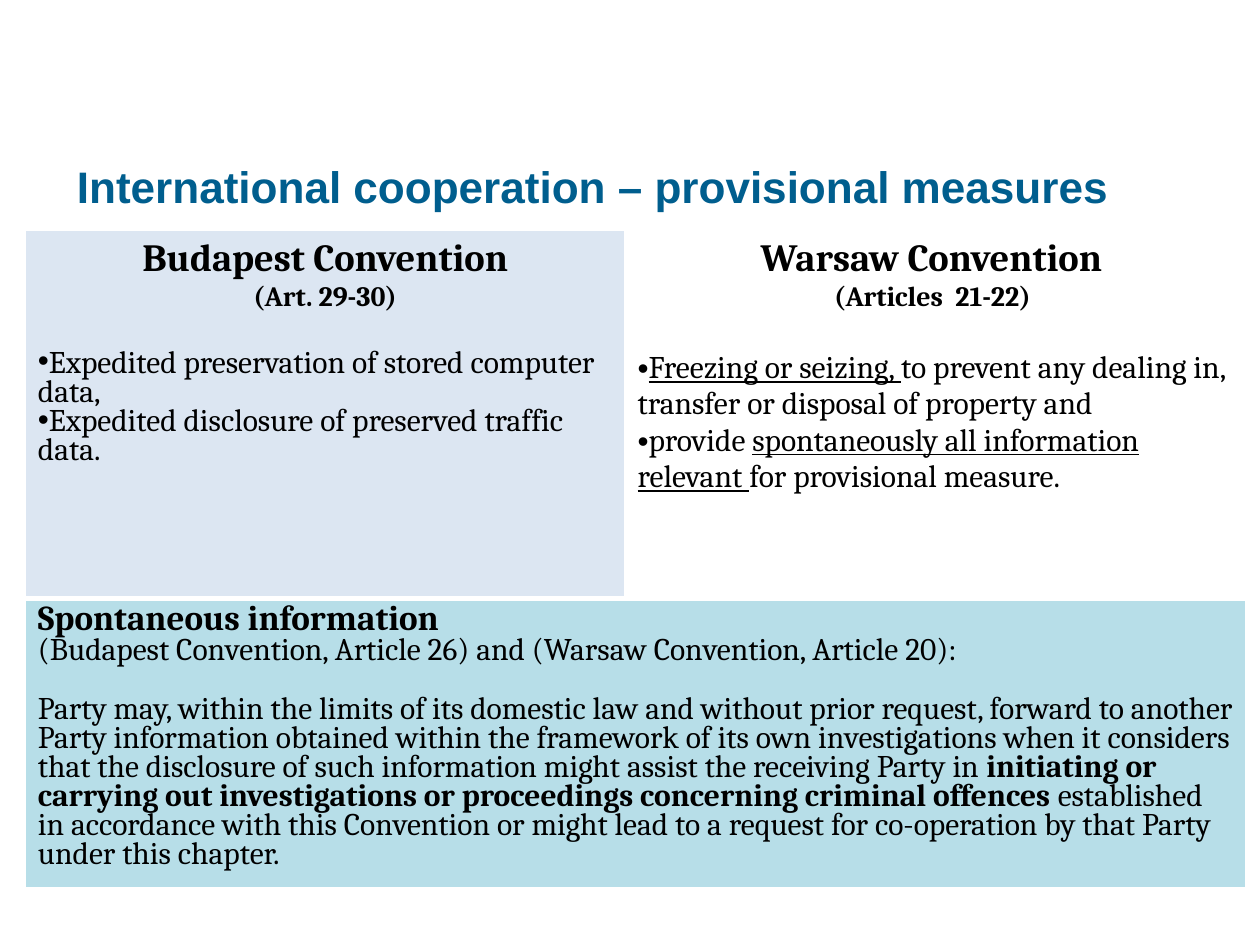
import pptx
import pptx.dml.color
import pptx.enum.text
import pptx.oxml.ns
import pptx.util
from lxml import etree
from pptx.util import Cm, Pt

COLOURS = {
    "title": "005E8E",
    "text": "000000",
    "border": "FFFFFF",
    "budapest": "DCE6F2",
    "warsaw": "FFFFFF",
    "spontaneous": "B7DEE8",
}
CENTER = pptx.enum.text.PP_ALIGN.CENTER
LEFT = pptx.enum.text.PP_ALIGN.LEFT


def rgb(name):
    return pptx.dml.color.RGBColor.from_string(COLOURS[name])


def add_child(parent, tag, **attributes):
    return etree.SubElement(parent, pptx.oxml.ns.qn(tag), attributes)


class SlideBuilder:
    body_font = "Cambria"
    title_font = "Arial"

    def __init__(self, slide):
        self.slide = slide

    def paragraph(self, frame, spans, size, bold=False, align=LEFT, spacing=1.0,
                  before=0, bullet=False, font=None, colour="text"):
        """Append a paragraph; spans are (text, emphasis), emphasis being "", "bold" or "underline"."""
        para = frame.paragraphs[0]
        if para.runs:
            para = frame.add_paragraph()
        if bullet:
            properties = para._p.get_or_add_pPr()
            properties.set("marL", "0")
            properties.set("indent", "0")
            add_child(properties, "a:buFont", typeface="Arial")
            add_child(properties, "a:buChar", char="•")
        para.alignment = align
        para.line_spacing = spacing
        para.space_before = Pt(before)
        para.space_after = Pt(0)
        para.font.name = font or self.body_font
        para.font.size = Pt(size)
        para.font.bold = bold
        para.font.color.rgb = rgb(colour)
        for text, emphasis in spans:
            span = para.add_run()
            span.text = text
            if emphasis == "bold":
                span.font.bold = True
            elif emphasis == "underline":
                span.font.underline = True

    def title(self, text, left, top, width, height):
        box = self.slide.shapes.add_textbox(left, top, width, height)
        frame = box.text_frame
        frame.word_wrap = True
        frame.vertical_anchor = pptx.enum.text.MSO_ANCHOR.MIDDLE
        self.paragraph(frame, [(text, "")], 25.2, bold=True, spacing=0.9,
                       font=self.title_font, colour="title")

    def table(self, left, top, widths, heights):
        frame = self.slide.shapes.add_table(len(heights), len(widths), left, top,
                                            sum(widths), sum(heights))
        table = frame.table
        table.first_row = False
        table.horz_banding = False
        for column, width in zip(table.columns, widths):
            column.width = width
        for row, height in zip(table.rows, heights):
            row.height = height
        return table

    def cell(self, cell, fill, top_border, bottom_border, paragraphs):
        """Style a table cell and fill it with (spans, options) paragraphs."""
        properties = cell._tc.get_or_add_tcPr()
        borders = {"L": 1, "R": 1, "T": top_border, "B": bottom_border}
        for side, width in borders.items():
            line = add_child(properties, f"a:ln{side}", w=str(Pt(width)))
            add_child(add_child(line, "a:solidFill"), "a:srgbClr", val=COLOURS["border"])
        cell.fill.solid()
        cell.fill.fore_color.rgb = rgb(fill)
        for spans, options in paragraphs:
            self.paragraph(cell.text_frame, spans, **options)


def main():
    deck = pptx.Presentation()
    deck.slide_width, deck.slide_height = Cm(25.4), Cm(19.05)
    page = SlideBuilder(deck.slides.add_slide(deck.slide_layouts[6]))
    page.title("International cooperation – provisional measures",
               Cm(1.3), Cm(2.92), Cm(22.86), Cm(1.8))

    table = page.table(Cm(0.51), Cm(4.65), [Cm(12.09), Cm(12.52)], [Cm(7.42), Cm(5.82)])
    table.cell(1, 0).merge(table.cell(1, 1))

    heading = dict(size=22, bold=True, align=CENTER)
    articles = dict(size=16, bold=True, align=CENTER)
    bullet = dict(size=18, bullet=True)
    tight_bullet = dict(bullet, spacing=0.8)
    tight = dict(size=18, spacing=0.8)

    page.cell(table.cell(0, 0), "budapest", 1, 3, [
        ([("Budapest Convention", "")], heading),
        ([("(Art. 29-30)", "")], articles),
        ([("Expedited preservation of stored computer data,", "")],
         dict(tight_bullet, before=21)),
        ([("Expedited disclosure of preserved traffic data.", "")], tight_bullet),
    ])
    page.cell(table.cell(0, 1), "warsaw", 1, 3, [
        ([("Warsaw Convention ", "")], heading),
        ([("(Articles  21-22) ", "")], articles),
        ([("Freezing or seizing, ", "underline"),
          ("to prevent any dealing in, transfer or disposal of property and", "")],
         dict(bullet, before=21)),
        ([("provide ", ""),
          ("spontaneously all information relevant ", "underline"),
          ("for provisional measure.", "")], bullet),
    ])
    page.cell(table.cell(1, 0), "spontaneous", 3, 1, [
        ([("Spontaneous information", "")], dict(size=20, bold=True, spacing=0.8)),
        ([("(Budapest Convention, Article 26) and (Warsaw Convention, Article 20):", "")],
         tight),
        ([("Party may, within the limits of its domestic law and without prior request, "
           "forward to another Party information obtained within the framework of its own "
           "investigations when it considers that the disclosure of such information might "
           "assist the receiving Party in ", ""),
          ("initiating or carrying out investigations or proceedings concerning criminal "
           "offences", "bold"),
          (" established in accordance with this Convention or might lead to a request for "
           "co-operation by that Party under this chapter.", "")],
         dict(tight, before=17)),
    ])
    deck.save("out.pptx")


if __name__ == "__main__":
    main()
